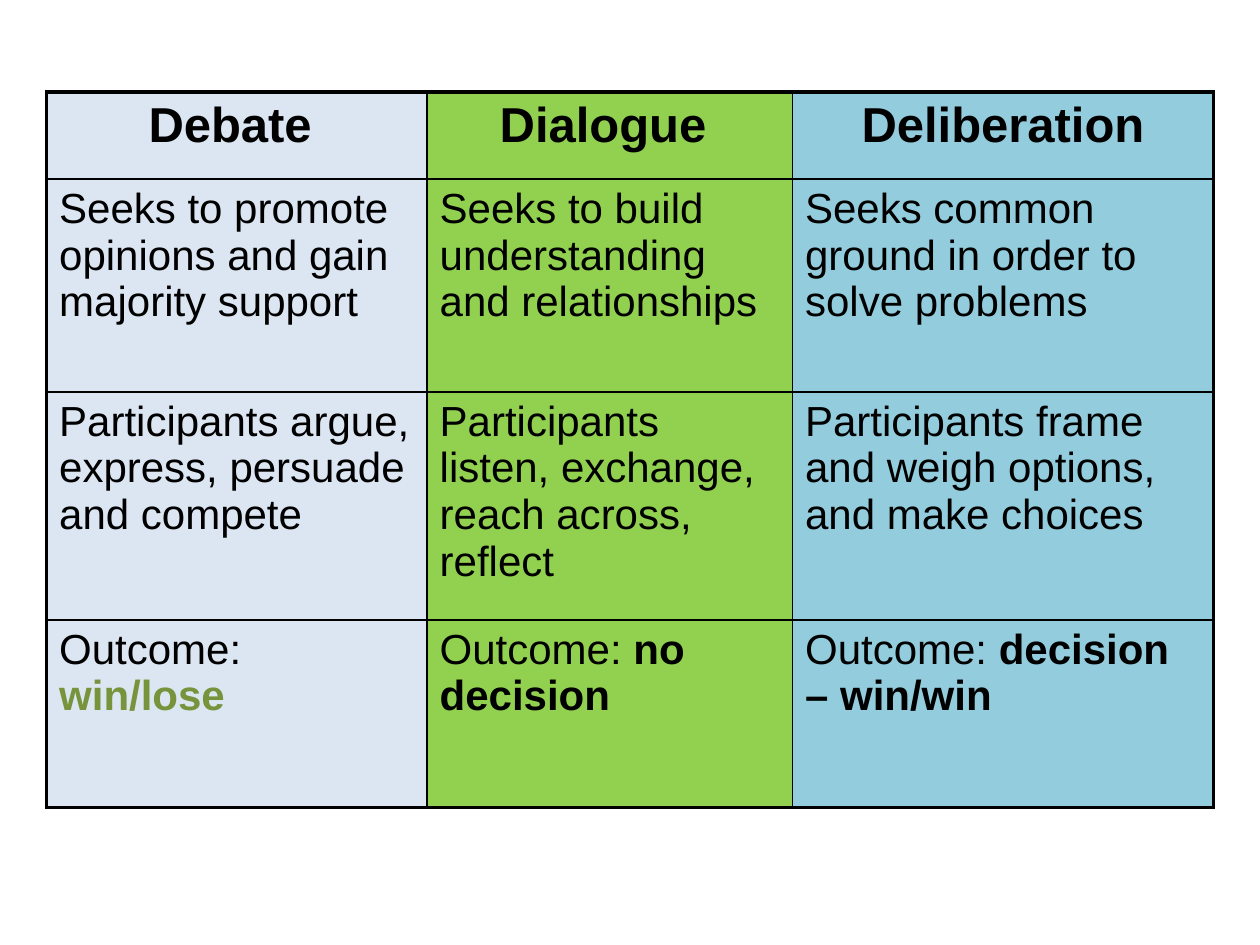
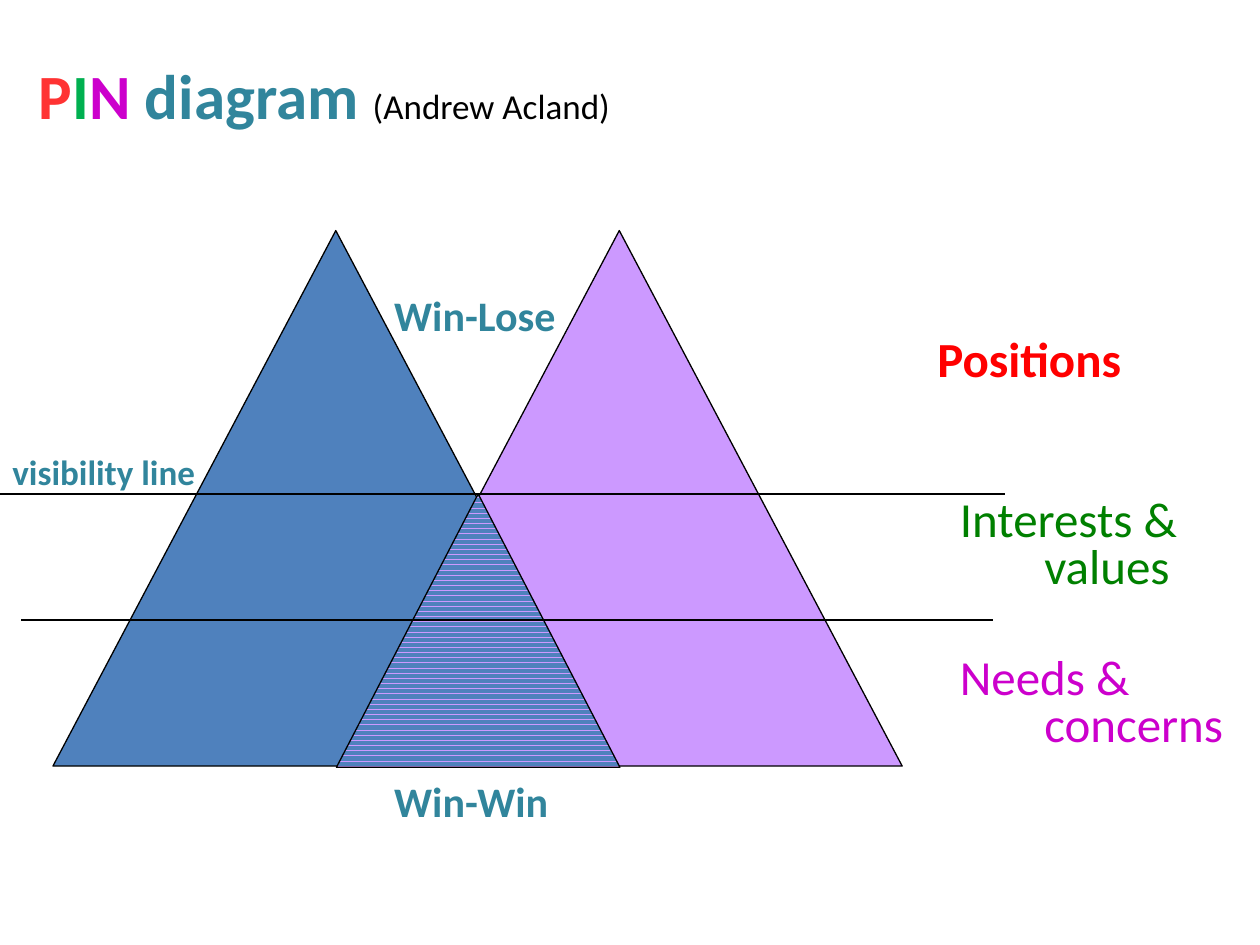
from lxml import etree
from pptx import Presentation
from pptx.dml.color import RGBColor
from pptx.enum import dml, shapes, text
from pptx.oxml.ns import qn
from pptx.util import Inches, Pt

BLACK = RGBColor(0, 0, 0)
PALE_BLUE = RGBColor(0xDC, 0xE6, 0xF2)
LIME = RGBColor(0x92, 0xD0, 0x50)
AQUA = RGBColor(0x93, 0xCD, 0xDD)
OLIVE = RGBColor(0x77, 0x93, 0x3C)
CORAL = RGBColor(0xFF, 0x33, 0x33)
RED = RGBColor(0xFF, 0, 0)
EMERALD = RGBColor(0, 0xB0, 0x50)
GREEN = RGBColor(0, 0x80, 0)
MAGENTA = RGBColor(0xCC, 0, 0xCC)
TEAL = RGBColor(0x31, 0x85, 0x9C)
BLUE = RGBColor(0x4F, 0x81, 0xBD)
LILAC = RGBColor(0xCC, 0x99, 0xFF)

# Approaches: heading, column width, fill, aim, behaviour, outcome and its colour
APPROACHES = [
    ("Debate ", 3.02, PALE_BLUE,
     "Seeks to promote opinions and gain majority support",
     "Participants argue, express, persuade and compete",
     "win/lose", OLIVE),
    ("Dialogue ", 2.9, LIME,
     "Seeks to build understanding and relationships",
     "Participants listen, exchange, reach across, reflect",
     "no decision", BLACK),
    ("Deliberation", 3.34, AQUA,
     "Seeks common ground in order to solve problems",
     "Participants frame and weigh options, and make choices",
     "decision – win/win", BLACK),
]
ROW_HEIGHTS = [0.69, 1.69, 1.81, 1.49]
TABLE_LEFT, TABLE_TOP = 0.37, 0.73
OUTER_BORDER, INNER_BORDER = 2.25, 1

# Runs: text, size, colour, bold
PIN_TITLE = [
    ("P", 36, CORAL, True),
    ("I", 36, EMERALD, True),
    ("N", 36, MAGENTA, True),
    (" diagram ", 36, TEAL, True),
    ("(Andrew Acland)", 20, BLACK, False),
]
# Side and middle labels: run, box, hanging indent
HANG = 0.67
LABELS = [
    (("Positions", 28, RED, True), (7.34, 2.65, 2.05, 0.47), HANG),
    (("Interests & values", 28, GREEN, False), (7.52, 3.92, 2.13, 1), HANG),
    (("Needs & concerns", 28, MAGENTA, False), (7.52, 5.17, 2.35, 0.92), HANG),
    (("Win-Win", 24, TEAL, True), (3.03, 6.18, 1.81, 0.47), HANG),
    (("Win-Lose", 24, TEAL, True), (3.03, 2.25, 1.92, 0.5), 0),
    (("visibility line", 20, TEAL, True), (0, 3.53, 1.76, 0.44), 0),
]
PEAK_TOP, PARTY_WIDTH, PARTY_HEIGHT = 1.83, 4.49, 4.25
LEFT_PARTY, RIGHT_PARTY = 0.42, 2.67
VISIBILITY_Y, NEEDS_Y = 3.92, 4.92
OVERLAP = (RIGHT_PARTY, VISIBILITY_Y, 2.25, 2.17)
VISIBILITY_LINES = [(0.42, 7.98), (0, 7.72)]
NEEDS_LINE = (0.17, 7.88)


def add_runs(paragraph, runs, font_name):
    paragraph.font.name = font_name
    for words, size, colour, bold in runs:
        run = paragraph.add_run()
        run.text = words
        run.font.name = font_name
        run.font.size = Pt(size)
        run.font.color.rgb = colour
        run.font.bold = bold


def add_border(cell, side, width):
    line = etree.SubElement(cell._tc.get_or_add_tcPr(), qn(f"a:ln{side}"),
                            w=str(Pt(width)))
    fill = etree.SubElement(line, qn("a:solidFill"))
    etree.SubElement(fill, qn("a:srgbClr"), val=str(BLACK))


def add_approach_table(slide):
    n_rows, n_columns = len(ROW_HEIGHTS), len(APPROACHES)
    table = slide.shapes.add_table(
        n_rows, n_columns, Inches(TABLE_LEFT), Inches(TABLE_TOP),
        Inches(sum(approach[1] for approach in APPROACHES)),
        Inches(sum(ROW_HEIGHTS))).table
    for row, height in zip(table.rows, ROW_HEIGHTS):
        row.height = Inches(height)
    for c, (heading, width, fill, aim, behaviour, outcome, tint) in enumerate(APPROACHES):
        table.columns[c].width = Inches(width)
        column_runs = [
            [(heading, 28, BLACK, True)],
            [(aim, 24, BLACK, False)],
            [(behaviour, 24, BLACK, False)],
            [("Outcome: ", 24, BLACK, False), (outcome, 24, tint, True)],
        ]
        for r, runs in enumerate(column_runs):
            cell = table.cell(r, c)
            on_edge = {"L": c == 0, "R": c == n_columns - 1,
                       "T": r == 0, "B": r == n_rows - 1}
            for side, outer in on_edge.items():
                add_border(cell, side, OUTER_BORDER if outer else INNER_BORDER)
            cell.fill.solid()
            cell.fill.fore_color.rgb = fill
            paragraph = cell.text_frame.paragraphs[0]
            paragraph.alignment = text.PP_ALIGN.CENTER if r == 0 else text.PP_ALIGN.LEFT
            paragraph.space_after = Pt(10)
            add_runs(paragraph, runs, "Arial")


def add_label(slide, runs, box, margin=0, hang=0):
    frame = slide.shapes.add_textbox(*map(Inches, box)).text_frame
    frame.word_wrap = True
    paragraph = frame.paragraphs[0]
    add_runs(paragraph, runs, "Calibri")
    properties = paragraph._p.get_or_add_pPr()
    properties.set("marL", str(Inches(margin)))
    properties.set("indent", str(Inches(-hang)))
    if hang:
        paragraph.line_spacing = 0.8
    return frame


def add_triangle(slide, box, colour, stripes=None):
    triangle = slide.shapes.add_shape(
        shapes.MSO_SHAPE.ISOSCELES_TRIANGLE, *map(Inches, box))
    triangle.shadow.inherit = False
    if stripes is None:
        triangle.fill.solid()
    else:
        triangle.fill.patterned()
        triangle.fill.pattern = dml.MSO_PATTERN.DARK_HORIZONTAL
        triangle.fill.back_color.rgb = stripes
    triangle.fill.fore_color.rgb = colour
    triangle.line.color.rgb = BLACK
    triangle.line.width = Pt(0.75)


def add_level_line(slide, ends, y):
    start, end = ends
    line = slide.shapes.add_connector(
        shapes.MSO_CONNECTOR.STRAIGHT, Inches(start), Inches(y), Inches(end), Inches(y))
    line.line.color.rgb = BLACK
    line.line.width = Pt(0.75)
    etree.SubElement(line._element.spPr, qn("a:effectLst"))


def add_pin_diagram(slide):
    title = add_label(slide, PIN_TITLE, (0, 0, 10, 1.5), margin=0.21)
    title.vertical_anchor = text.MSO_ANCHOR.MIDDLE
    for left, colour in [(RIGHT_PARTY, LILAC), (LEFT_PARTY, BLUE)]:
        add_triangle(slide, (left, PEAK_TOP, PARTY_WIDTH, PARTY_HEIGHT), colour)
    add_triangle(slide, OVERLAP, BLUE, stripes=LILAC)
    for ends in VISIBILITY_LINES:
        add_level_line(slide, ends, VISIBILITY_Y)
    add_level_line(slide, NEEDS_LINE, NEEDS_Y)
    for run, box, hang in LABELS:
        add_label(slide, [run], box, margin=hang, hang=hang)


def main():
    deck = Presentation()
    deck.slide_width, deck.slide_height = Inches(10), Inches(7.5)
    blank = deck.slide_layouts[6]
    for build in (add_approach_table, add_pin_diagram):
        build(deck.slides.add_slide(blank))
    deck.save("out.pptx")


if __name__ == "__main__":
    main()
